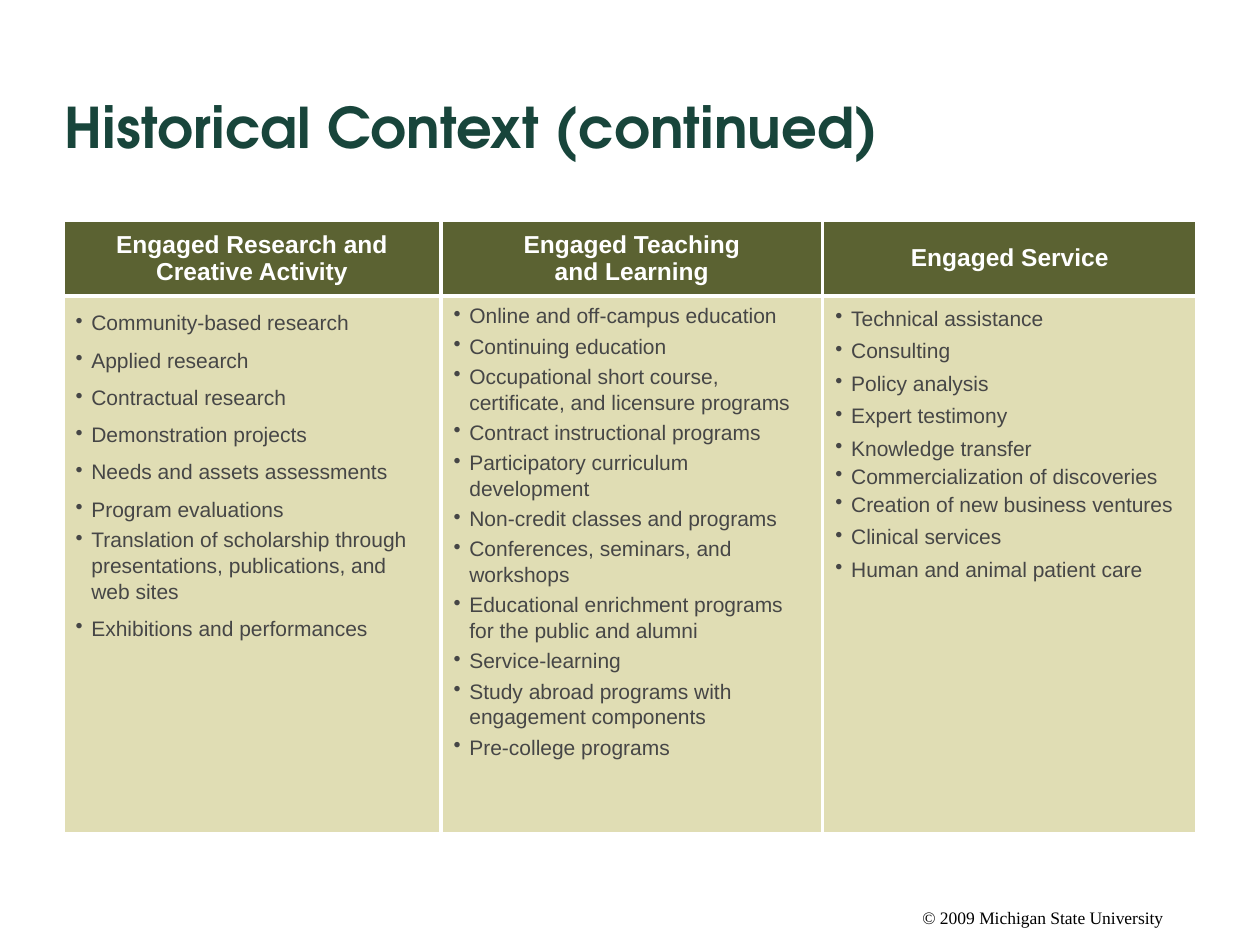
from dataclasses import dataclass

from lxml import etree
from pptx import Presentation
from pptx.dml.color import RGBColor
from pptx.enum import text
from pptx.oxml import ns
from pptx.util import Pt

GREEN = RGBColor(0x18, 0x45, 0x3B)
OLIVE = RGBColor(0x5B, 0x62, 0x32)
SAND = RGBColor(0xE0, 0xDD, 0xB4)
GRAY = RGBColor(0x46, 0x46, 0x46)
WHITE = RGBColor(0xFF, 0xFF, 0xFF)
BLACK = RGBColor(0, 0, 0)

INDENT = Pt(9)
BULLET_GAP = Pt(2.5)
HEADER_HEIGHT, BODY_HEIGHT = 43.2, 307.44


@dataclass
class Column:
    width: float
    heading: list[str]
    items: list[str]
    spacing: float
    exceptions: dict[int, float]  # item index -> its own line spacing


COLUMNS = [
    Column(216, ["Engaged Research and", "Creative Activity"], [
        "Community-based research",
        "Applied research",
        "Contractual research",
        "Demonstration projects",
        "Needs and assets assessments",
        "Program evaluations",
        "Translation of scholarship through presentations, publications, and web sites",
        "Exhibitions and performances",
    ], 1.4, {6: 1.1}),
    Column(218.16, ["Engaged Teaching", "and Learning"], [
        "Online and off-campus education",
        "Continuing education",
        "Occupational short course, certificate, and licensure programs",
        "Contract instructional programs",
        "Participatory curriculum development",
        "Non-credit classes and programs",
        "Conferences, seminars, and workshops",
        "Educational enrichment programs for the public and alumni",
        "Service-learning",
        "Study abroad programs with engagement components",
        "Pre-college programs",
    ], 1.1, {}),
    Column(213.84, ["Engaged Service"], [
        "Technical assistance",
        "Consulting",
        "Policy analysis",
        "Expert testimony",
        "Knowledge transfer",
        "Commercialization of discoveries",
        "Creation of new business ventures",
        "Clinical services",
        "Human and animal patient care",
    ], 1.2, {5: 1.0, 6: 1.0}),
]


def set_font(p, name: str, size: float, color: RGBColor, bold: bool = False) -> None:
    p.font.name = name
    p.font.size = Pt(size)
    p.font.bold = bold
    p.font.color.rgb = color


def add_paragraph(tf, index: int, content: str):
    p = tf.paragraphs[0] if index == 0 else tf.add_paragraph()
    p.add_run().text = content
    return p


def add_bullet(p) -> None:
    props = p._p.get_or_add_pPr()
    props.set("marL", str(INDENT))
    props.set("indent", str(-INDENT))
    etree.SubElement(props, ns.qn("a:buChar")).set("char", "•")


def style_cell(cell, fill: RGBColor) -> None:
    props = cell._tc.get_or_add_tcPr()
    for side in ("lnL", "lnR", "lnT", "lnB"):
        line = etree.SubElement(props, ns.qn(f"a:{side}"), w=str(Pt(2.25)))
        solid = etree.SubElement(line, ns.qn("a:solidFill"))
        etree.SubElement(solid, ns.qn("a:srgbClr"), val=str(WHITE))
    cell.fill.solid()
    cell.fill.fore_color.rgb = fill


def fill_heading(cell, column: Column) -> None:
    style_cell(cell, OLIVE)
    cell.vertical_anchor = text.MSO_ANCHOR.MIDDLE
    for i, line in enumerate(column.heading):
        p = add_paragraph(cell.text_frame, i, line)
        p.alignment = text.PP_ALIGN.CENTER
        set_font(p, "Arial", 14, WHITE, bold=True)


def fill_items(cell, column: Column) -> None:
    style_cell(cell, SAND)
    for i, item in enumerate(column.items):
        p = add_paragraph(cell.text_frame, i, item)
        add_bullet(p)
        p.line_spacing = column.exceptions.get(i, column.spacing)
        if i:
            p.space_before = BULLET_GAP
        set_font(p, "Arial", 12, GRAY)


def add_text(s, left: float, top: float, width: float, height: float,
             content: str, anchor: text.MSO_ANCHOR):
    tf = s.shapes.add_textbox(Pt(left), Pt(top), Pt(width), Pt(height)).text_frame
    tf.word_wrap = True
    tf.vertical_anchor = anchor
    return add_paragraph(tf, 0, content)


def main() -> None:
    prs = Presentation()
    prs.slide_width, prs.slide_height = Pt(720), Pt(540)
    s = prs.slides.add_slide(prs.slide_layouts[6])

    # Title
    p = add_text(s, 30, 48, 660, 48, "Historical Context (continued)",
                 text.MSO_ANCHOR.MIDDLE)
    set_font(p, "TeX Gyre Adventor", 32, GREEN, bold=True)

    # Table of engagement types
    table = s.shapes.add_table(
        2, len(COLUMNS), Pt(36), Pt(126), Pt(sum(c.width for c in COLUMNS)),
        Pt(HEADER_HEIGHT + BODY_HEIGHT)).table
    table.horz_banding = False
    table.rows[0].height = Pt(HEADER_HEIGHT)
    table.rows[1].height = Pt(BODY_HEIGHT)
    for i, column in enumerate(COLUMNS):
        table.columns[i].width = Pt(column.width)
        fill_heading(table.cell(0, i), column)
        fill_items(table.cell(1, i), column)

    # Copyright line
    p = add_text(s, 162, 516.24, 509.76, 17.28, "© 2009 Michigan State University",
                 text.MSO_ANCHOR.BOTTOM)
    p.alignment = text.PP_ALIGN.RIGHT
    p.line_spacing = 0.8
    set_font(p, "Times New Roman", 10, BLACK)

    prs.save("out.pptx")


if __name__ == "__main__":
    main()
